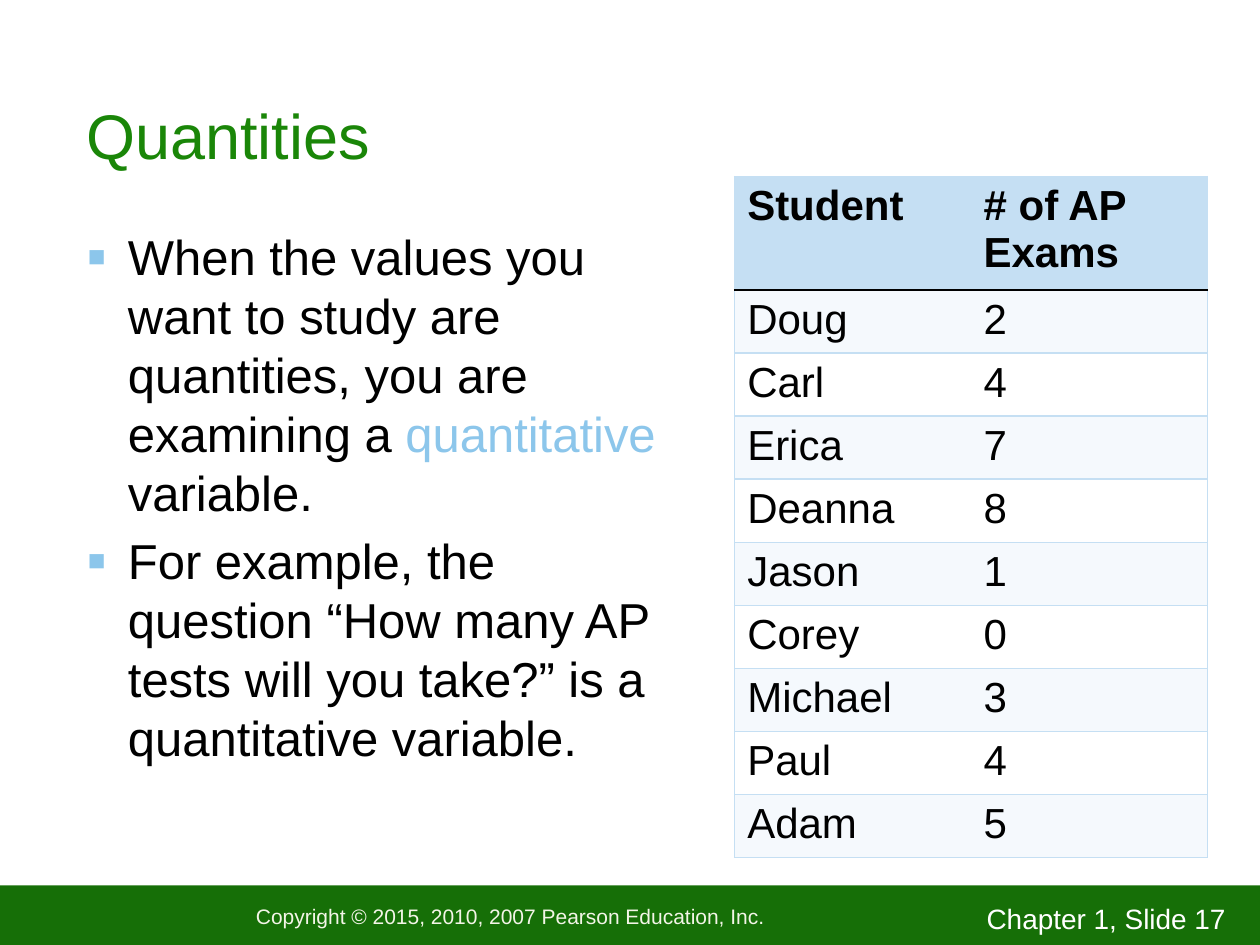
from dataclasses import dataclass

from lxml.etree import SubElement
from pptx import Presentation
from pptx.dml.color import RGBColor
from pptx.enum.shapes import MSO_SHAPE as Shape
from pptx.enum.text import MSO_ANCHOR as Anchor, MSO_AUTO_SIZE as AutoSize, PP_ALIGN as Align
from pptx.oxml import parse_xml
from pptx.oxml.ns import nsdecls, qn
from pptx.util import Cm, Pt


@dataclass(frozen=True)
class Theme:
    font: str = "Arial"
    title_color: str = "1A8608"
    band_color: str = "166F07"
    copyright_color: str = "F3F5E7"
    accent: str = "8CC6EB"
    header_fill: str = "C5DFF3"
    stripe_fill: str = "F5F9FD"
    black: str = "000000"
    white: str = "FFFFFF"
    title_size: int = 36
    body_size: int = 28
    table_size: int = 24
    number_size: int = 16
    copyright_size: int = 12


@dataclass(frozen=True)
class Box:
    left: float
    top: float
    width: float
    height: float

    def lengths(self) -> tuple:
        return Cm(self.left), Cm(self.top), Cm(self.width), Cm(self.height)


@dataclass(frozen=True)
class Span:
    text: str
    color: str


@dataclass(frozen=True)
class Student:
    name: str
    exams: int


THEME = Theme()
TITLE = Box(1.49, 0.82, 23.06, 2.77)
BODY = Box(1.52, 4.45, 12.24, 12.7)
TABLE = Box(14.81, 3.56, 9.53, 12.49)
BAND = Box(0, 17.85, 25.4, 1.2)
NUMBER = Box(19.64, 18.05, 5.76, 0.66)
HEADER_HEIGHT = 1.6
ROW_HEIGHT = 1.21

BULLETS = [
    [
        Span("When the values you want to study are quantities, you are examining a ", THEME.black),
        Span("quantitative ", THEME.accent),
        Span("variable.", THEME.black),
    ],
    [Span("For example, the question “How many AP tests will you take?” is a quantitative variable.", THEME.black)],
]
STUDENTS = [
    Student("Doug", 2), Student("Carl", 4), Student("Erica", 7),
    Student("Deanna", 8), Student("Jason", 1), Student("Corey", 0),
    Student("Michael", 3), Student("Paul", 4), Student("Adam", 5),
]


def add_span(para, span: Span, size: int, bold: bool = False) -> None:
    run = para.add_run()
    run.text = span.text
    run.font.name = THEME.font
    run.font.size = Pt(size)
    run.font.bold = bold
    run.font.color.rgb = RGBColor.from_string(span.color)


def add_title(page, text: str) -> None:
    title = page.shapes.title
    title.left, title.top, title.width, title.height = TITLE.lengths()
    frame = title.text_frame
    frame.auto_size = AutoSize.NONE
    frame.vertical_anchor = Anchor.BOTTOM
    para = frame.paragraphs[0]
    para.alignment = Align.LEFT
    add_span(para, Span(text, THEME.title_color), THEME.title_size)


def add_bullet(para) -> None:
    properties = para._p.get_or_add_pPr()
    properties.set("marL", str(Cm(0.81)))
    properties.set("indent", str(-Cm(0.81)))
    color = SubElement(properties, qn("a:buClr"))
    SubElement(color, qn("a:srgbClr"), val=THEME.accent)
    SubElement(properties, qn("a:buSzPct"), val="60000")
    SubElement(properties, qn("a:buFont"), typeface=THEME.font)
    SubElement(properties, qn("a:buChar"), char="■")


def add_body(page) -> None:
    frame = page.shapes.add_textbox(*BODY.lengths()).text_frame
    frame.word_wrap = True
    frame.margin_right = 0
    for index, spans in enumerate(BULLETS):
        para = frame.add_paragraph() if index else frame.paragraphs[0]
        add_bullet(para)
        para.space_before = Pt(5.6 if index else 0)
        for span in spans:
            add_span(para, span, THEME.body_size)


def set_borders(cell, borders: dict[str, str]) -> None:
    properties = cell._tc.get_or_add_tcPr()
    for position, (side, color) in enumerate(borders.items()):
        properties.insert(position, parse_xml(
            f'<a:{side} {nsdecls("a")} w="{Pt(1)}"><a:solidFill>'
            f'<a:srgbClr val="{color}"/></a:solidFill></a:{side}>'
        ))


def add_student_table(page) -> None:
    rows = [("Student", "# of AP Exams")]
    rows += [(student.name, str(student.exams)) for student in STUDENTS]
    table = page.shapes.add_table(len(rows), 2, *TABLE.lengths()).table
    table.horz_banding = False
    style = table._tbl.tblPr.find(qn("a:tableStyleId"))
    style.text = "{2D5ABB26-0587-4C30-8999-92F81FD0307C}"
    for row, texts in enumerate(rows):
        table.rows[row].height = Cm(ROW_HEIGHT if row else HEADER_HEIGHT)
        fill = THEME.header_fill if row == 0 else THEME.stripe_fill if row % 2 else THEME.white
        for column, text in enumerate(texts):
            cell = table.cell(row, column)
            cell.fill.solid()
            cell.fill.fore_color.rgb = RGBColor.from_string(fill)
            set_borders(cell, {
                "lnR" if column else "lnL": THEME.header_fill,
                "lnT": THEME.black if row == 1 else THEME.header_fill,
                "lnB": THEME.black if row == 0 else THEME.header_fill,
            })
            add_span(cell.text_frame.paragraphs[0], Span(text, THEME.black), THEME.table_size, row == 0)


def add_footer(page) -> None:
    band = page.shapes.add_shape(Shape.RECTANGLE, *BAND.lengths())
    band.shadow.inherit = False
    band.fill.solid()
    band.fill.fore_color.rgb = RGBColor.from_string(THEME.band_color)
    band.line.fill.background()
    frame = band.text_frame
    frame.vertical_anchor = Anchor.MIDDLE
    frame.margin_left = Cm(5.16)
    frame.margin_top = Cm(0.05)
    frame.margin_right = frame.margin_bottom = 0
    para = frame.paragraphs[0]
    para.alignment = Align.LEFT
    notice = Span("Copyright © 2015, 2010, 2007 Pearson Education, Inc.", THEME.copyright_color)
    add_span(para, notice, THEME.copyright_size)
    number = page.shapes.add_textbox(*NUMBER.lengths()).text_frame
    number.word_wrap = True
    add_span(number.paragraphs[0], Span("Chapter 1, Slide 17", THEME.white), THEME.number_size)


def main() -> None:
    deck = Presentation()
    deck.slide_width, deck.slide_height = Cm(25.4), Cm(19.05)
    page = deck.slides.add_slide(deck.slide_layouts[5])
    add_footer(page)
    add_title(page, "Quantities")
    add_body(page)
    add_student_table(page)
    deck.save("out.pptx")


if __name__ == "__main__":
    main()
